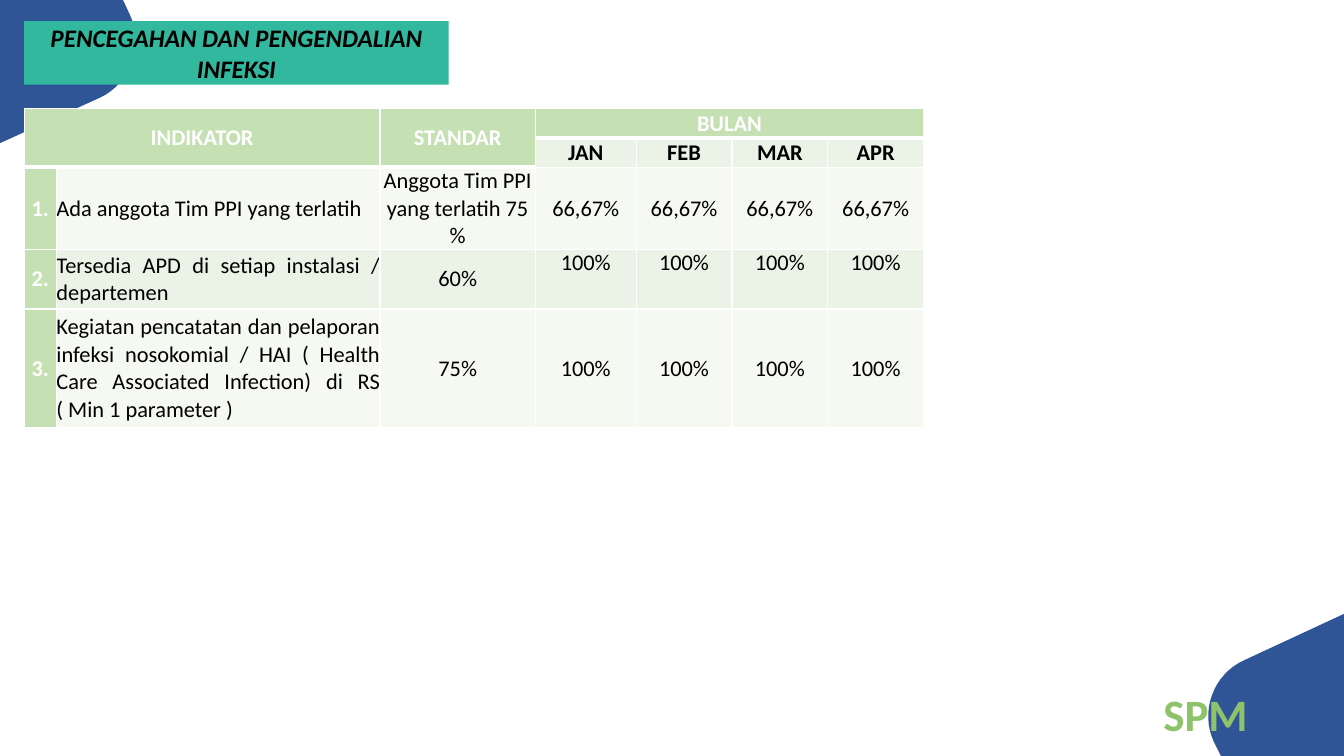
from lxml.etree import SubElement
from pptx import Presentation
from pptx.dml.color import RGBColor
from pptx.enum.text import MSO_ANCHOR as ANCHOR, MSO_AUTO_SIZE as AUTO, PP_ALIGN as ALIGN
from pptx.oxml.ns import qn
from pptx.util import Inches, Pt

BLUE, TEAL, LIME = "2F5597", "32B89E", "8EC36B"
HEAD, BAND, PALE = "C5E0B3", "EAF3E5", "F5F9F2"
BLACK, WHITE = "000000", "FFFFFF"

MONTHS = ["JAN", "FEB", "MAR", "APR"]
INDICATORS = [
    ("Ada anggota Tim PPI yang terlatih", "Anggota Tim PPI yang terlatih 75 %", "66,67%"),
    ("Tersedia APD di setiap instalasi / departemen", "60%", "100%"),
    ("Kegiatan pencatatan dan pelaporan infeksi nosokomial / HAI "
     "( Health Care Associated Infection) di RS ( Min 1 parameter )", "75%", "100%"),
]
COLS = [0.32, 3.21, 1.54, 1, 0.95, 0.95, 0.95]
ROWS = [0.29, 0.29, 0.81, 0.59, 1.18]


def rgb(value):
    return RGBColor.from_string(value)


def box(x, y, w, h):
    return Inches(x), Inches(y), Inches(w), Inches(h)


def add_run(p, text, size, color, bold=True, italic=False):
    r = p.add_run()
    r.text = text
    r.font.name, r.font.size = "Calibri", Pt(size)
    r.font.bold, r.font.italic = bold, italic
    r.font.color.rgb = rgb(color)


def bezier(p0, p1, p2, p3, steps=16):
    """Points along a cubic curve, without its start."""
    for i in range(1, steps + 1):
        t = i / steps
        u = 1 - t
        yield tuple(u**3 * a + 3 * u * u * t * b + 3 * u * t * t * c + t**3 * d
                    for a, b, c, d in zip(p0, p1, p2, p3))


def add_corner(s, before, curve, after):
    """Blue corner patch: straight edges joined by one rounded corner."""
    points = [Inches(v) for pt in [*before, *bezier(*curve), *after] for v in pt]
    start, *rest = zip(points[::2], points[1::2])
    builder = s.shapes.build_freeform(*start)
    builder.add_line_segments(rest, close=True)
    sp = builder.convert_to_shape()
    sp.shadow.inherit = False
    sp.fill.solid()
    sp.fill.fore_color.rgb = rgb(BLUE)
    sp.line.fill.background()


def add_title(s, text):
    sp = s.shapes.title
    sp.left, sp.top, sp.width, sp.height = box(0.24, 0.21, 4.21, 0.63)
    geom = SubElement(sp._element.spPr, qn("a:prstGeom"), prst="round2DiagRect")
    SubElement(geom, qn("a:avLst"))
    sp.fill.solid()
    sp.fill.fore_color.rgb = rgb(TEAL)
    tf = sp.text_frame
    tf.word_wrap, tf.auto_size, tf.vertical_anchor = True, AUTO.NONE, ANCHOR.MIDDLE
    p = tf.paragraphs[0]
    p.alignment = ALIGN.CENTER
    add_run(p, text, 18, BLACK, italic=True)
    # Bring the banner in front of the corner patch
    s.shapes._spTree.append(sp._element)


def style_cell(cell, fill, bottom=1):
    tcPr = cell._tc.get_or_add_tcPr()
    for side, width in (("L", 1), ("R", 1), ("T", 1), ("B", bottom)):
        ln = SubElement(tcPr, qn(f"a:ln{side}"), w=str(Pt(width)))
        SubElement(SubElement(ln, qn("a:solidFill")), qn("a:srgbClr"), val=WHITE)
    cell.fill.solid()
    cell.fill.fore_color.rgb = rgb(fill)
    cell.margin_left = cell.margin_right = cell.margin_top = cell.margin_bottom = 0


def write_cell(cell, text, color=BLACK, bold=False, align=ALIGN.CENTER, anchor=ANCHOR.MIDDLE):
    cell.vertical_anchor = anchor
    p = cell.text_frame.paragraphs[0]
    p.alignment = align
    add_run(p, text, 16, color, bold)


def add_indicator_table(s):
    frame = s.shapes.add_table(len(ROWS), len(COLS), *box(0.24, 1.08, sum(COLS), sum(ROWS)))
    table = frame.table
    table.first_row = table.horz_banding = False
    for col, width in zip(table.columns, COLS):
        col.width = Inches(width)
    for row, height in zip(table.rows, ROWS):
        row.height = Inches(height)

    # Fills and borders
    for i in range(len(ROWS)):
        for j in range(len(COLS)):
            header = i == 0 or (i == 1 and j < 3)
            fill = HEAD if header or j == 0 else BAND if i % 2 else PALE
            style_cell(table.cell(i, j), fill, 3 if header else 1)

    # Header
    for text, first, last in (("INDIKATOR", (0, 0), (1, 1)),
                              ("STANDAR", (0, 2), (1, 2)),
                              ("BULAN", (0, 3), (0, 6))):
        table.cell(*first).merge(table.cell(*last))
        write_cell(table.cell(*first), text, WHITE, bold=True)
    for j, month in enumerate(MONTHS, 3):
        write_cell(table.cell(1, j), month, bold=True)

    # Indicators
    for n, (name, standard, value) in enumerate(INDICATORS, 1):
        i = n + 1
        write_cell(table.cell(i, 0), f"{n}.", WHITE, bold=True)
        write_cell(table.cell(i, 1), name, align=ALIGN.JUSTIFY)
        write_cell(table.cell(i, 2), standard)
        for j in range(3, len(COLS)):
            write_cell(table.cell(i, j), value, anchor=ANCHOR.TOP if n == 2 else ANCHOR.MIDDLE)


def add_label(s, text):
    tf = s.shapes.add_textbox(*box(11.44, 6.76, 1.18, 0.64)).text_frame
    tf.word_wrap = True
    add_run(tf.paragraphs[0], text, 32, LIME)


def main():
    prs = Presentation()
    prs.slide_width, prs.slide_height = Inches(13.33), Inches(7.5)
    s = prs.slides.add_slide(prs.slide_layouts[5])

    # Corner patches
    add_corner(s, [(13.33, 7.5), (12.11, 7.5), (12.04, 7.36)],
               [(12.04, 7.36), (11.9, 7.06), (12.03, 6.69), (12.34, 6.55)], [(13.33, 6.09)])
    add_corner(s, [(0, 0), (1.22, 0), (1.29, 0.15)],
               [(1.29, 0.15), (1.43, 0.46), (1.29, 0.83), (0.99, 0.97)], [(0, 1.42)])

    # Content
    add_indicator_table(s)
    add_title(s, "PENCEGAHAN DAN PENGENDALIAN INFEKSI")
    add_label(s, "SPM")
    prs.save("out.pptx")


if __name__ == "__main__":
    main()
